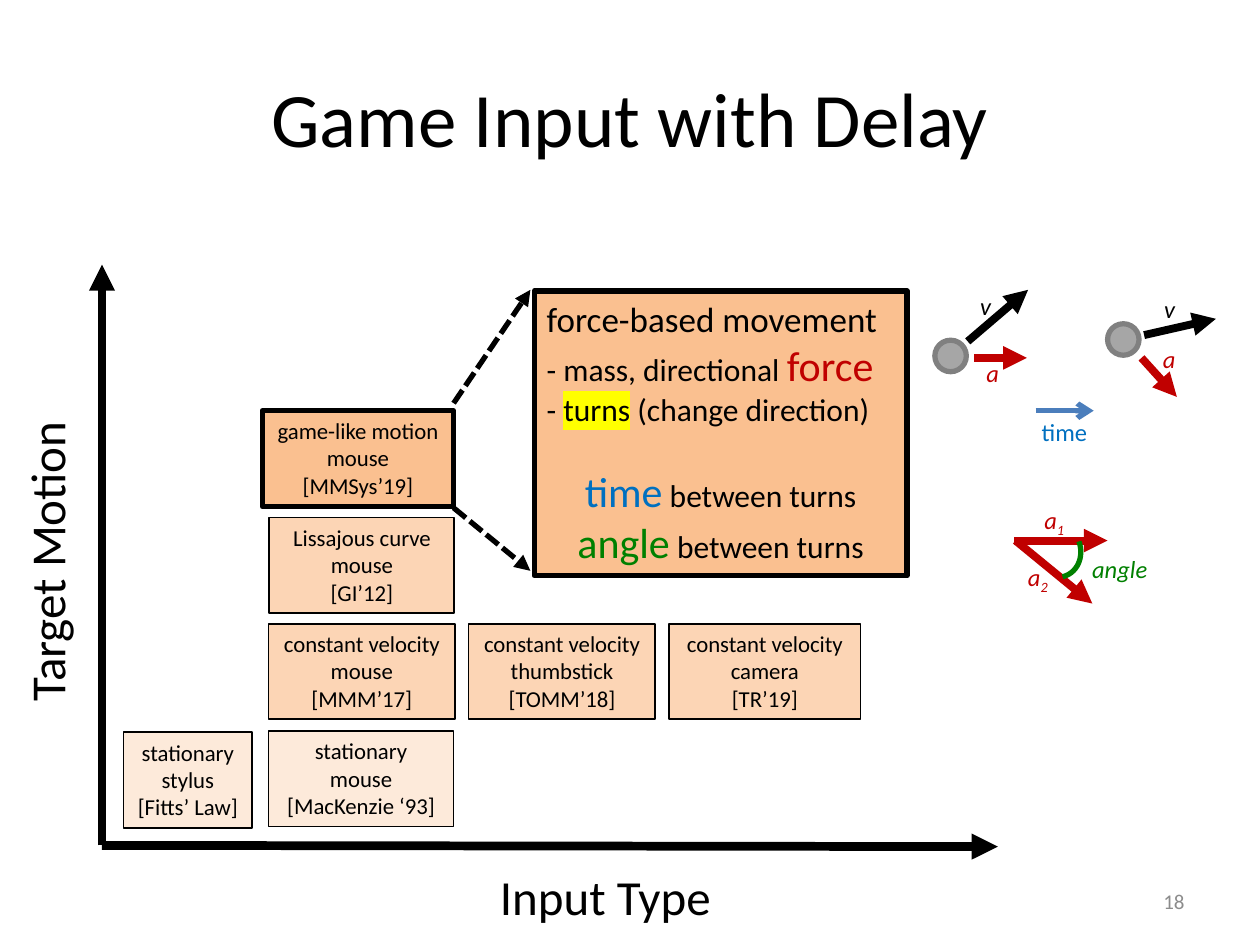
"""Build the slide that maps game input studies by target motion and input type."""
from lxml import etree
from pptx import Presentation
from pptx.dml.color import RGBColor
from pptx.enum.shapes import MSO_CONNECTOR, MSO_SHAPE
from pptx.enum.text import MSO_ANCHOR, PP_ALIGN
from pptx.oxml.ns import qn
from pptx.util import Pt

LEFT, CENTER, RIGHT = PP_ALIGN.LEFT, PP_ALIGN.CENTER, PP_ALIGN.RIGHT
TOP, MIDDLE = MSO_ANCHOR.TOP, MSO_ANCHOR.MIDDLE
RECTANGLE, OVAL, ARC = MSO_SHAPE.RECTANGLE, MSO_SHAPE.OVAL, MSO_SHAPE.ARC
STRAIGHT = MSO_CONNECTOR.STRAIGHT
BLACK, RED, GREEN, BLUE = "000000", "C00000", "008000", "0070C0"
PALE, LIGHT, STRONG = "FDEADA", "FCD5B5", "FAC090"
color_of = RGBColor.from_string


def write(paragraph, text, size=14, color=BLACK, italic=None, highlight=None, baseline=None):
    run = paragraph.add_run()
    run.text = text
    run.font.name = "Calibri"
    run.font.size = Pt(size)
    run.font.italic = italic
    run.font.color.rgb = color_of(color)
    properties = run.font._element
    if highlight:
        mark = etree.Element(qn("a:highlight"))
        etree.SubElement(mark, qn("a:srgbClr"), val=highlight)
        properties.find(qn("a:solidFill")).addnext(mark)
    if baseline:
        properties.set("baseline", str(baseline * 1000))


def add_arrow(x1, y1, x2, y2, color, width, head="triangle", dash=None):
    connector = slide.shapes.add_connector(STRAIGHT, Pt(x1), Pt(y1), Pt(x2), Pt(y2))
    connector.line.color.rgb = color_of(color)
    connector.line.width = Pt(width)
    shape_properties = connector._element.spPr
    line = shape_properties.find(qn("a:ln"))
    if dash:
        etree.SubElement(line, qn("a:prstDash"), val=dash)
    etree.SubElement(line, qn("a:tailEnd"), type=head)
    etree.SubElement(shape_properties, qn("a:effectLst"))


presentation = Presentation()
presentation.slide_width, presentation.slide_height = Pt(720), Pt(540)
slide = presentation.slides.add_slide(presentation.slide_layouts[5])

title = slide.shapes.title
title.left, title.top, title.width, title.height = Pt(36), Pt(21.6), Pt(648), Pt(90)
title.text_frame.vertical_anchor = MIDDLE
title.text_frame.paragraphs[0].alignment = CENTER
write(title.text_frame.paragraphs[0], "Game Input with Delay", size=44)

number = slide.shapes.add_textbox(Pt(516), Pt(500.5), Pt(168), Pt(28.75))
number.text_frame.vertical_anchor = MIDDLE
number.text_frame.paragraphs[0].alignment = RIGHT
write(number.text_frame.paragraphs[0], "18", size=12, color="8C8C8C")

add_arrow(58.3, 483.1, 570.2, 483.8, BLACK, 5)
add_arrow(58.3, 483.1, 58.3, 151.2, BLACK, 5)

studies = [
    (70.6, 418.4, 73.4, PALE, 1, ["stationary", "stylus", "[Fitts’ Law]"]),
    (153.4, 417.6, 105.8, PALE, 1, ["stationary", "mouse", "[MacKenzie ‘93]"]),
    (153.4, 356.4, 106.6, LIGHT, 1, ["constant velocity mouse", "[MMM’17]"]),
    (267.8, 356.4, 106.6, LIGHT, 1, ["constant velocity", "thumbstick", "[TOMM’18]"]),
    (382.3, 356.4, 109.4, LIGHT, 1, ["constant velocity", "camera", "[TR’19]"]),
    (153.9, 295.8, 105.8, LIGHT, 1, ["Lissajous curve", "mouse", "[GI’12]"]),
    (149.8, 234.7, 109.4, STRONG, 3, ["game-like motion", "mouse", "[MMSys’19]"]),
]
boxes = [
    (left, top, width, 54.7, fill, line, True,
     [(CENTER, 0, [(text, {"size": 13})]) for text in lines])
    for left, top, width, fill, line, lines in studies
]
boxes.append((305.3, 166.3, 213.1, 162.7, STRONG, 3, False, [
    (LEFT, 0, [("force-based movement", {"size": 20})]),
    (LEFT, 0, [("- mass, directional ", {"size": 18}), ("force", {"size": 24, "color": RED})]),
    (LEFT, 0, [("- ", {"size": 18}), ("turns", {"size": 18, "highlight": "FFFF00"}),
               (" (change direction)", {"size": 18})]),
    (CENTER, 22, [("time", {"size": 24, "color": BLUE}), (" between turns", {"size": 18})]),
    (CENTER, 0, [("angle", {"size": 24, "color": GREEN}), (" between turns", {"size": 18})]),
]))
for left, top, width, height, fill, line, wrap, paragraphs in boxes:
    box = slide.shapes.add_shape(RECTANGLE, Pt(left), Pt(top), Pt(width), Pt(height))
    box.shadow.inherit = False
    box.fill.solid()
    box.fill.fore_color.rgb = color_of(fill)
    box.line.color.rgb = color_of(BLACK)
    box.line.width = Pt(line)
    frame = box.text_frame
    frame.word_wrap = wrap
    frame.vertical_anchor = TOP
    for index, (alignment, space, runs) in enumerate(paragraphs):
        paragraph = frame.add_paragraph() if index else frame.paragraphs[0]
        paragraph.alignment = alignment
        if space:
            paragraph.space_before = Pt(space)
        for text, style in runs:
            write(paragraph, text, **style)

for left, top in [(534.2, 194.4), (632.9, 185)]:
    ball = slide.shapes.add_shape(OVAL, Pt(left), Pt(top), Pt(18), Pt(18))
    ball.shadow.inherit = False
    ball.fill.solid()
    ball.fill.fore_color.rgb = color_of("A6A6A6")
    ball.line.color.rgb = color_of("808080")
    ball.line.width = Pt(3)

for x1, y1, x2, y2, color in [
    (553, 195.1, 587.5, 165.6, BLACK),
    (556.6, 204.5, 586.8, 204.5, RED),
    (653.8, 191.5, 694.8, 182.2, BLACK),
    (652.3, 204.5, 672.5, 226.8, RED),
    (579.6, 308.9, 632.9, 308.9, RED),
    (580.3, 308.9, 624.2, 344.9, RED),
]:
    add_arrow(x1, y1, x2, y2, color, 4.5)
add_arrow(591.8, 234.7, 625, 234.7, "4B7EBC", 3, head="arrow")
add_arrow(259.2, 230.4, 303.1, 165.6, BLACK, 3, dash="sysDash")
add_arrow(259.2, 290.2, 303.1, 326.2, BLACK, 3, dash="sysDash")

angle_arc = slide.shapes.add_shape(ARC, Pt(587.5), Pt(300.2), Pt(31.7), Pt(28.1))
angle_arc.shadow.inherit = False
angle_arc.adjustments[0], angle_arc.adjustments[1] = 162, 3.61
angle_arc.rotation = 69.9
angle_arc.fill.background()
angle_arc.line.color.rgb = color_of(GREEN)
angle_arc.line.width = Pt(3)

axis_style = {"size": 28}
velocity_style = {"italic": True}
force_style = {"italic": True, "color": RED}
subscript_style = {**force_style, "baseline": -25}
labels = [
    (278.6, 491.8, 136.1, 41, 0, [("Input Type", axis_style)]),
    (-61.9, 299.5, 176.4, 41, 270, [("Target Motion", axis_style)]),
    (553, 162.7, 20.9, 24.5, 0, [("v", velocity_style)]),
    (658.1, 164.2, 20.9, 24.5, 0, [("v", velocity_style)]),
    (556.6, 200.9, 21.6, 24.5, 0, [("a", force_style)]),
    (657.4, 193, 21.6, 24.5, 0, [("a", force_style)]),
    (589.7, 285.1, 26.6, 24.5, 0, [("a", force_style), ("1", subscript_style)]),
    (580.3, 317.5, 26.6, 24.5, 0, [("a", force_style), ("2", subscript_style)]),
    (617, 313.2, 46.8, 24.5, 0, [("angle", {"italic": True, "color": GREEN})]),
    (588.2, 234.7, 41, 24.5, 0, [("time", {"color": BLUE})]),
]
for left, top, width, height, rotation, runs in labels:
    label = slide.shapes.add_textbox(Pt(left), Pt(top), Pt(width), Pt(height))
    label.rotation = rotation
    label.text_frame.word_wrap = False
    for text, style in runs:
        write(label.text_frame.paragraphs[0], text, **style)

presentation.save("out.pptx")
